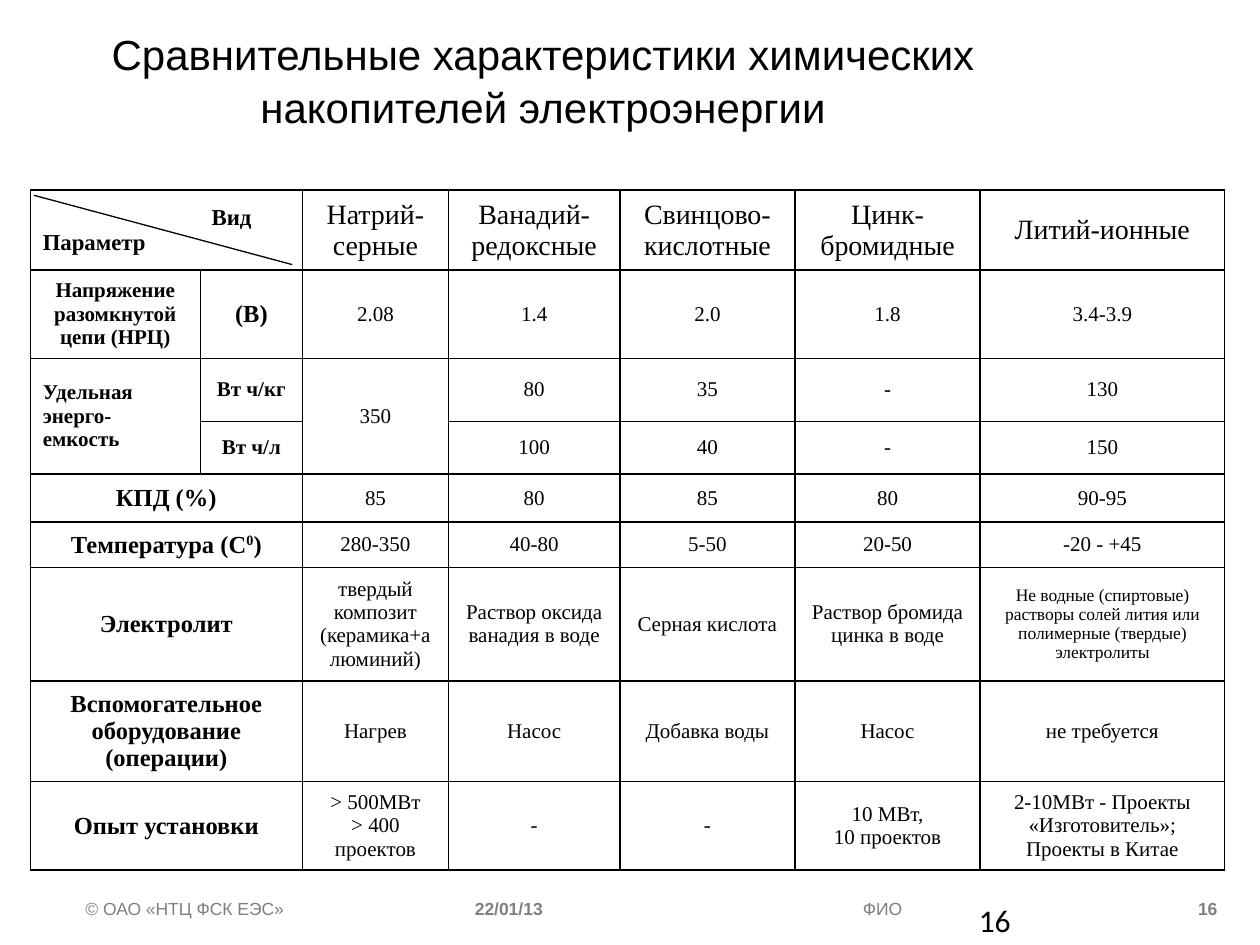
from lxml import etree
from pptx import Presentation
from pptx.dml.color import RGBColor
from pptx.enum import shapes, text
from pptx.oxml import ns
from pptx.util import Inches, Pt

COLORS = {"ink": "000000", "company": "7F7F7F", "date": "808080"}
SERIF, SANS = "Times New Roman", "Arial"
COLS = [1.35, 0.81, 1.16, 1.36, 1.39, 1.47, 1.94]
ROWS = [0.63, 0.7, 0.5, 0.42, 0.38, 0.36, 0.9, 0.8, 0.7]
CELLS = [
    ["Вид\nПараметр", "", "Натрий-серные", "Ванадий-редоксные",
     "Свинцово-кислотные", "Цинк-бромидные", "Литий-ионные"],
    ["Напряжение разомкнутой цепи (НРЦ)", "(В)", "2.08", "1.4", "2.0", "1.8", "3.4-3.9"],
    ["Удельная энерго-емкость", "Вт ч/кг", "350", "80", "35", "-", "130"],
    ["", "Вт ч/л", "", "100", "40", "-", "150"],
    ["КПД (%)", "", "85", "80", "85", "80", "90-95"],
    ["Температура (С^0^)", "", "280-350", "40-80", "5-50", "20-50", "-20 - +45"],
    ["Электролит", "", "твердый композит (керамика+алюминий)",
     "Раствор оксида ванадия в воде", "Серная кислота", "Раствор бромида цинка в воде",
     "Не водные (спиртовые) растворы солей лития или полимерные (твердые) электролиты"],
    ["Вспомогательное оборудование (операции)", "", "Нагрев", "Насос",
     "Добавка воды", "Насос", "не требуется"],
    ["Опыт установки", "", "> 500МВт\n> 400 проектов", "-", "-",
     "10 МВт,\n10 проектов", "2-10МВт - Проекты «Изготовитель»;\nПроекты в Китае"],
]
MERGES = [((r, 0), (r, 1)) for r in (0, 4, 5, 6, 7, 8)] + [((2, 0), (3, 0)), ((2, 2), (3, 2))]
SIZES = {(0, 0): 13, (1, 0): 12, (2, 0): 12, (1, 1): 14, (6, 6): 10}


def add_run(p, content, size, font, color="ink", bold=False):
    """Append one formatted run to a paragraph."""
    r = p.add_run()
    r.text = content
    r.font.size, r.font.name, r.font.bold = Pt(size), font, bold
    r.font.color.rgb = RGBColor.from_string(COLORS[color])
    return r


def add_label(s, box, content, size, font, color="ink", bold=False, align="LEFT"):
    """Add a one-paragraph text box and return its paragraph."""
    tf = s.shapes.add_textbox(*map(Inches, box)).text_frame
    tf.word_wrap = True
    p = tf.paragraphs[0]
    p.alignment = getattr(text.PP_ALIGN, align)
    add_run(p, content, size, font, color, bold)
    return p


def add_borders(cell):
    """Draw thin lines on all four sides of a cell."""
    tc_pr = cell._tc.get_or_add_tcPr()
    for i, side in enumerate(("lnL", "lnR", "lnT", "lnB")):
        ln = etree.Element(ns.qn(f"a:{side}"), w=str(Pt(1)))
        fill = etree.SubElement(ln, ns.qn("a:solidFill"))
        etree.SubElement(fill, ns.qn("a:srgbClr"), val=COLORS["ink"])
        tc_pr.insert(i, ln)


def fill_cell(cell, content, size, bold, align):
    """Write the paragraphs of a cell, raising text between carets."""
    tf = cell.text_frame
    for i, line in enumerate(content.split("\n")):
        p = tf.add_paragraph() if i else tf.paragraphs[0]
        p.alignment = align
        for j, part in enumerate(line.split("^")):
            if part:
                r = add_run(p, part, size, SERIF, bold=bold)
                if j % 2:
                    r.font._element.set("baseline", "30000")


def add_comparison(s, box):
    """Add the table of storage types and their parameters."""
    frame = s.shapes.add_table(len(ROWS), len(COLS), *map(Inches, box))
    table = frame.table
    table.first_row = table.horz_banding = False
    for col, width in zip(table.columns, COLS):
        col.width = Inches(width)
    for row, height in zip(table.rows, ROWS):
        row.height = Inches(height)
    for start, end in MERGES:
        table.cell(*start).merge(table.cell(*end))
    for i, values in enumerate(CELLS):
        for j, content in enumerate(values):
            cell = table.cell(i, j)
            cell.vertical_anchor = text.MSO_ANCHOR.MIDDLE
            cell.fill.background()
            add_borders(cell)
            if content:
                usual = 16 if i == 0 else 14 if j == 0 else 12
                left = (i, j) in ((0, 0), (2, 0))
                align = text.PP_ALIGN.LEFT if left else text.PP_ALIGN.CENTER
                fill_cell(cell, content, SIZES.get((i, j), usual), j < 2, align)
    kind = table.cell(0, 0).text_frame.paragraphs[0]
    kind._p.get_or_add_pPr().set("marL", str(Inches(1.34)))


def add_diagonal(s, box):
    """Split the corner cell with a diagonal line."""
    x, y, w, h = box
    line = s.shapes.add_connector(shapes.MSO_CONNECTOR.STRAIGHT,
                                  *map(Inches, (x, y, x + w, y + h)))
    line.line.width = Pt(0.75)
    line.line.color.rgb = RGBColor.from_string(COLORS["ink"])
    etree.SubElement(line._element.spPr, ns.qn("a:effectLst"))


def add_footer(s, top, height):
    """Add the footer labels in one row."""
    for x, w, content, color, bold, align in (
        (6.75, 2.5, "ФИО", "company", False, "LEFT"),
        (8.67, 1.09, "16", "date", True, "RIGHT"),
        (3.67, 1.09, "22/01/13", "date", True, "LEFT"),
        (0.58, 2.5, "© ОАО «НТЦ ФСК ЕЭС»", "company", False, "LEFT"),
    ):
        add_label(s, (x, top, w, height), content, 10, SANS, color, bold, align)


def main():
    """Build the slide and save it."""
    prs = Presentation()
    prs.slide_width, prs.slide_height = Inches(10), Inches(7.5)
    s = prs.slides.add_slide(prs.slide_layouts[6])
    add_footer(s, 7.08, 0.42)
    add_comparison(s, (0.24, 1.51, sum(COLS), sum(ROWS)))
    add_label(s, (7.67, 7.1, 2.33, 0.4), "16", 18, "Calibri")
    title = add_label(s, (0, 0.16, 8.62, 0.91),
                      "Сравнительные характеристики химических накопителей электроэнергии",
                      24, SANS, align="CENTER")
    title.line_spacing = 1.05
    add_diagonal(s, (0.27, 1.55, 2.05, 0.55))
    prs.save("out.pptx")


if __name__ == "__main__":
    main()
